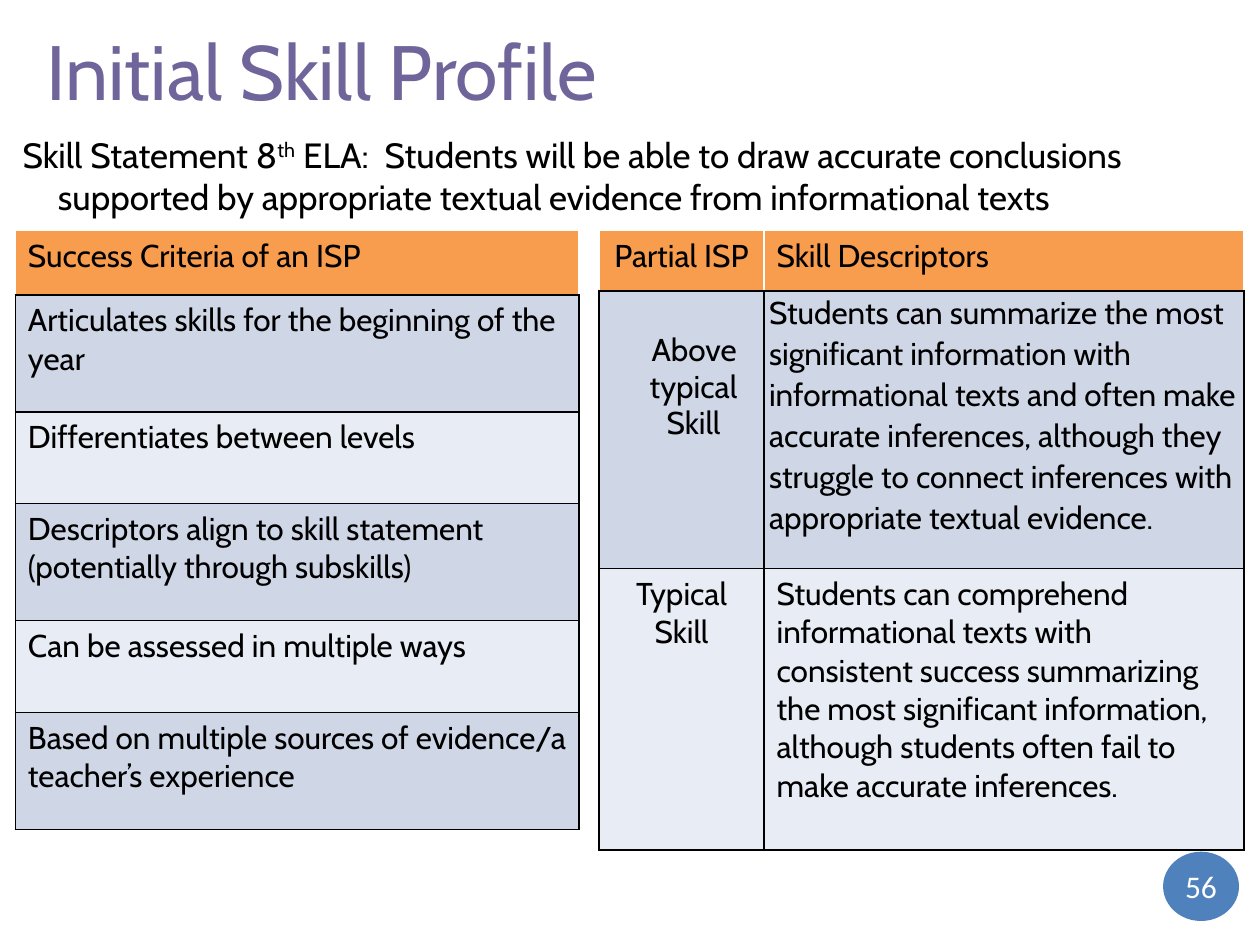
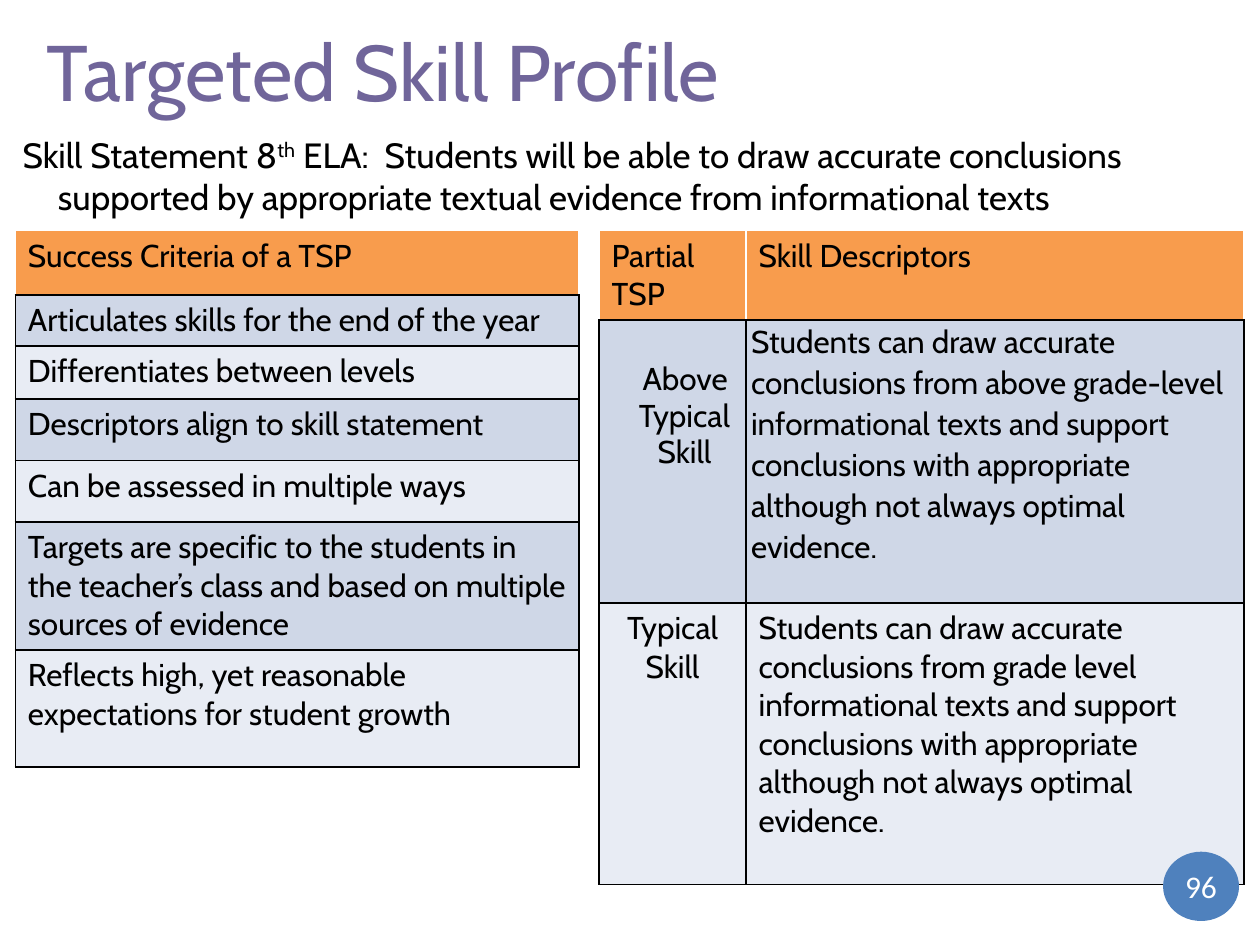
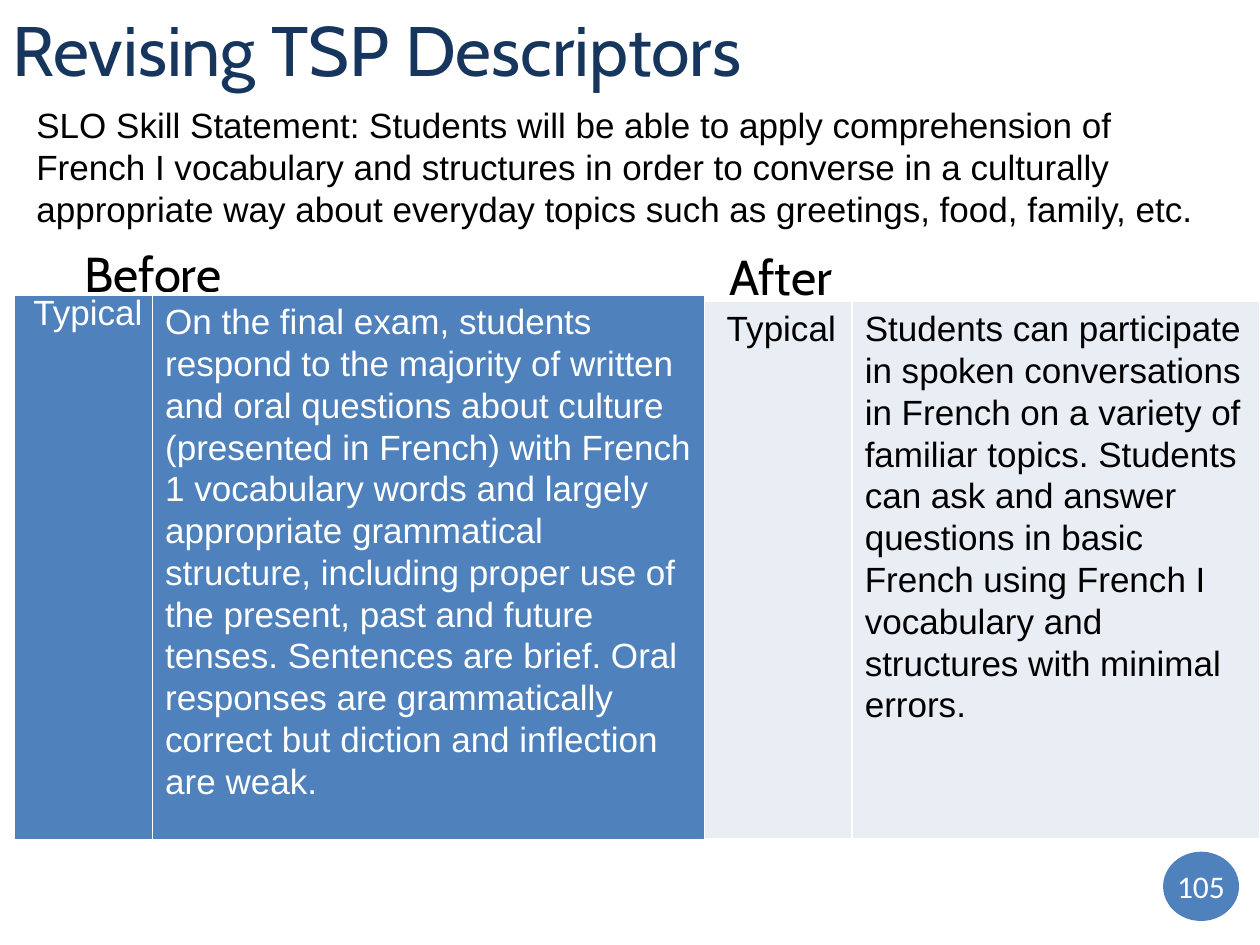
import pptx
import pptx.dml.color
import pptx.enum.shapes
import pptx.enum.text
import pptx.oxml
import pptx.oxml.ns
import pptx.util

Pt = pptx.util.Pt
ALIGN = pptx.enum.text.PP_ALIGN
ANCHOR = pptx.enum.text.MSO_ANCHOR

PURPLE, NAVY, BLACK, WHITE = "70659A", "17365D", "000000", "FFFFFF"
ORANGE, BLUE, BAND_DARK, BAND_LIGHT, PALE = "F89C4D", "4F81BD", "CFD7E7", "E8ECF4", "E9EDF4"
HEADING_FONT, BODY_FONT, NUMBER_FONT = "Cabin", "Arial", "Calibri"
INSETS = (7.2, 3.6, 7.2, 3.6)
NO_INSETS = (0, 0, 0, 0)
BLACK_EDGES = {side: (BLACK, 1) for side in "LRTB"}
HEADER_EDGES = {**{side: (WHITE, 1) for side in "LRT"}, "B": (BLACK, 1)}
TABLE_TOP = 131.8
SKILL_STATEMENT = [
    ("Skill Statement 8", 0),
    ("th", 30000),
    (" ELA:  Students will be able to draw accurate conclusions supported by "
     "appropriate textual evidence from informational texts", 0),
]


def rgb(value):
    """Turn a hex string into a colour."""
    return pptx.dml.color.RGBColor.from_string(value)


def add_run(p, text, size, font=HEADING_FONT, color=BLACK, baseline=0):
    """Append one formatted run to a paragraph."""
    r = p.add_run()
    r.text = text
    r.font.size, r.font.name = Pt(size), font
    r.font.color.rgb = rgb(color)
    if baseline:
        r.font._element.set("baseline", str(baseline))


def set_indent(p, left, first):
    """Set the left margin and first-line indent of a paragraph."""
    pPr = p._p.get_or_add_pPr()
    pPr.set("marL", str(Pt(left)))
    pPr.set("indent", str(Pt(first)))


def set_margins(obj, margins):
    """Set left, top, right and bottom insets of a cell or text frame."""
    obj.margin_left, obj.margin_top, obj.margin_right, obj.margin_bottom = map(Pt, margins)


def prepare_frame(sp, anchor=ANCHOR.TOP, margins=INSETS):
    """Give a shape wrapped text with fixed insets and return its first paragraph."""
    tf = sp.text_frame
    tf.word_wrap = True
    tf.auto_size = pptx.enum.text.MSO_AUTO_SIZE.NONE
    tf.vertical_anchor = anchor
    set_margins(tf, margins)
    return tf.paragraphs[0]


def add_text(slide, box, runs, size, font=HEADING_FONT, indent=None):
    """Add a text box holding one paragraph of (text, baseline) runs."""
    p = prepare_frame(slide.shapes.add_textbox(*map(Pt, box)))
    if indent:
        set_indent(p, *indent)
    for text, baseline in runs:
        add_run(p, text, size, font, baseline=baseline)


def add_titled_slide(prs, title, box, size, color, anchor, number):
    """Add a slide with a title and a round page number."""
    slide = prs.slides.add_slide(prs.slide_layouts[5])
    sp = slide.shapes.title
    sp.left, sp.top, sp.width, sp.height = map(Pt, box)
    p = prepare_frame(sp, anchor)
    p.alignment = ALIGN.LEFT
    add_run(p, title, size, color=color)
    return slide, number


def add_page_number(slide, number):
    """Add the round page number at the lower right."""
    sp = slide.shapes.add_shape(pptx.enum.shapes.MSO_SHAPE.OVAL, *map(Pt, (664.6, 486.7, 43.4, 39.6)))
    sp.shadow.inherit = False
    sp.fill.solid()
    sp.fill.fore_color.rgb = rgb(BLUE)
    sp.line.fill.background()
    p = prepare_frame(sp, ANCHOR.MIDDLE, NO_INSETS)
    p.alignment = ALIGN.CENTER
    add_run(p, number, 18, NUMBER_FONT, WHITE)


def set_edges(cell, edges):
    """Draw the borders of a cell from a side to (colour, width) mapping."""
    tcPr = cell._tc.get_or_add_tcPr()
    for side in "LRTB":
        color, width = edges[side]
        tcPr.append(pptx.oxml.parse_xml(
            f'<a:ln{side} {pptx.oxml.ns.nsdecls("a")} w="{Pt(width)}"><a:solidFill>'
            f'<a:srgbClr val="{color}"/></a:solidFill></a:ln{side}>'))


def add_table(slide, left, top, cols, rows):
    """Add a plain table with the given column widths and row heights."""
    box = left, top, sum(cols), sum(rows)
    table = slide.shapes.add_table(len(rows), len(cols), *map(Pt, box)).table
    table.first_row = table.horz_banding = False
    for column, width in zip(table.columns, cols):
        column.width = Pt(width)
    for row, height in zip(table.rows, rows):
        row.height = Pt(height)
    return table


def fill_cell(cell, text, fill, edges=BLACK_EDGES, size=18, font=HEADING_FONT, color=BLACK,
              align=ALIGN.LEFT, margins=INSETS, spacing=None, indent=None):
    """Format one cell and write its text."""
    set_edges(cell, edges)
    cell.fill.solid()
    cell.fill.fore_color.rgb = rgb(fill)
    set_margins(cell, margins)
    p = cell.text_frame.paragraphs[0]
    p.alignment = align
    if spacing:
        p.line_spacing = spacing
    if indent:
        set_indent(p, *indent)
    add_run(p, text, size, font, color)


def add_criteria(slide, left, heights, header, criteria):
    """Add the one-column table of success criteria in alternating bands."""
    table = add_table(slide, left, TABLE_TOP, [322], heights)
    fill_cell(table.cell(0, 0), header, ORANGE, HEADER_EDGES)
    for i, text in enumerate(criteria, 1):
        fill_cell(table.cell(i, 0), text, BAND_DARK if i % 2 else BAND_LIGHT)


def add_descriptors(slide, left, cols, heights, header, header_align, above, above_text, typical_text):
    """Add the two-column table of skill levels and their descriptors."""
    table = add_table(slide, left, TABLE_TOP, cols, heights)
    fill_cell(table.cell(0, 0), header, ORANGE, HEADER_EDGES, align=header_align)
    fill_cell(table.cell(0, 1), "Skill Descriptors", ORANGE, HEADER_EDGES)
    fill_cell(table.cell(1, 0), above, BAND_DARK, align=ALIGN.CENTER,
              margins=(0, 23.5, 0, 0), spacing=0.95, indent=(13.7, 0.7))
    fill_cell(table.cell(1, 1), above_text, BAND_DARK, margins=NO_INSETS,
              spacing=1.07, indent=(2.9, 0))
    fill_cell(table.cell(2, 0), "Typical Skill", BAND_LIGHT, align=ALIGN.CENTER)
    fill_cell(table.cell(2, 1), typical_text, BAND_LIGHT)


def add_profile_slide(prs, title, size, number, criteria, descriptors):
    """Add a skill profile slide with criteria at left and descriptors at right."""
    slide, number = add_titled_slide(prs, title, (19.4, 8, 664.6, 64), size, PURPLE, ANCHOR.MIDDLE, number)
    add_text(slide, (5.8, 72.7, 705.6, 55.4), SKILL_STATEMENT, 20, indent=(20.2, -20.2))
    add_criteria(slide, 8.8, *criteria)
    add_descriptors(slide, 342.3, *descriptors)
    add_page_number(slide, number)


def add_version(slide, box, heading, heading_box, cols, texts, fill, color, label_margins, label_spacing, edge):
    """Add a heading and the one-row table of a descriptor version below it."""
    left, top, height = box
    add_text(slide, heading_box, [(heading, 0)], 28)
    table = add_table(slide, left, top, cols, [height])
    edges = {"L": (WHITE, 1), "R": (WHITE, 1), "T": (WHITE, edge), "B": (WHITE, 3)}
    formats = [(label_margins, label_spacing), (INSETS, 1.07)]
    for i, (text, (margins, spacing)) in enumerate(zip(texts, formats)):
        fill_cell(table.cell(0, i), text, fill, edges, 20, BODY_FONT, color,
                  margins=margins, spacing=spacing)


def add_revision_slide(prs):
    """Add the slide comparing a descriptor before and after revision."""
    slide, number = add_titled_slide(prs, "Revising TSP Descriptors", (0, 0, 646.6, 55.4),
                                     40, NAVY, ANCHOR.TOP, "105")
    add_text(slide, (13.7, 55.4, 678.2, 80), [(
        "SLO Skill Statement: Students will be able to apply comprehension of French I "
        "vocabulary and structures in order to converse in a culturally appropriate way "
        "about everyday topics such as greetings, food, family, etc.", 0)], 20, BODY_FONT)
    add_version(slide, (8, 168, 313), "Before", (41, 135.4, 228.2, 41), [79.2, 315.4], [
        "Typical",
        "On the final exam, students respond to the majority of written and oral questions "
        "about culture (presented in French) with French 1 vocabulary words and largely "
        "appropriate grammatical structure, including proper use of the present, past and "
        "future tenses. Sentences are brief. Oral responses are grammatically correct but "
        "diction and inflection are weak."],
        BLUE, WHITE, (11.1, 0, 0, 0), None, 3)
    add_version(slide, (402.5, 172.1, 308), "After", (409.7, 137.5, 220.3, 41), [84.5, 232.8], [
        "Typical",
        "Students can participate in spoken conversations in French on a variety of familiar "
        "topics. Students can ask and answer questions in basic French using French I "
        "vocabulary and structures with minimal errors."],
        PALE, BLACK, (12.8, 3.6, 7.2, 3.6), 1.07, 1)
    add_page_number(slide, number)


def main():
    """Build the three slides and save them."""
    prs = pptx.Presentation()
    prs.slide_width, prs.slide_height = Pt(720), Pt(540)
    add_profile_slide(
        prs, "Initial Skill Profile", 44, "56",
        ([36.7, 66.9, 52.4, 66.9, 52.4, 66.9], "Success Criteria of an ISP", [
            "Articulates skills for the beginning of the year",
            "Differentiates between levels",
            "Descriptors align to skill statement (potentially through subskills)",
            "Can be assessed in multiple ways",
            "Based on multiple sources of evidence/a teacher’s experience"]),
        ([94.3, 274.4], [34.6, 158.4, 160.8], "Partial ISP", ALIGN.CENTER, "Above typical Skill",
         "Students can summarize the most significant information with informational texts and "
         "often make accurate inferences, although they struggle to connect inferences with "
         "appropriate textual evidence.",
         "Students can comprehend informational texts with consistent success summarizing the "
         "most significant information, although students often fail to make accurate inferences."))
    add_profile_slide(
        prs, "Targeted Skill Profile", 45, "96",
        ([36.7, 29, 30.2, 35.2, 35.3, 72, 66.9], "Success Criteria of a TSP", [
            "Articulates skills for the end of the year",
            "Differentiates between levels",
            "Descriptors align to skill statement",
            "Can be assessed in multiple ways",
            "Targets are specific to the students in the teacher’s class and based on multiple "
            "sources of evidence",
            "Reflects high, yet reasonable expectations for student growth"]),
        ([84, 284.7], [50.4, 161.7, 160.7], "Partial TSP", ALIGN.LEFT, "Above Typical Skill",
         "Students can draw accurate conclusions from above grade-level informational texts and "
         "support conclusions with appropriate although not always optimal evidence.",
         "Students can draw accurate conclusions from grade level informational texts and "
         "support conclusions with appropriate although not always optimal evidence."))
    add_revision_slide(prs)
    prs.save("out.pptx")


if __name__ == "__main__":
    main()
